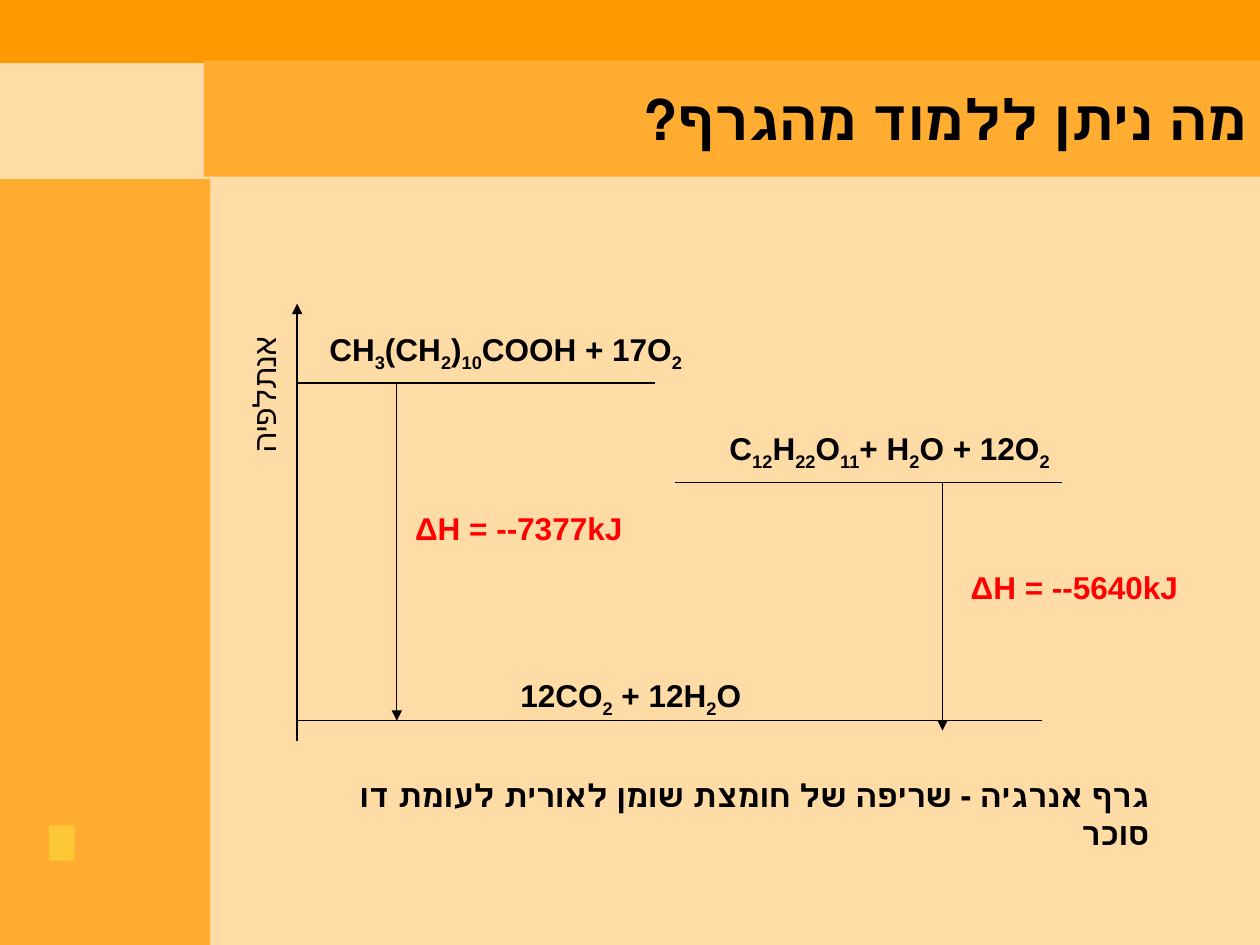
from lxml import etree
from pptx import Presentation
from pptx.dml.color import RGBColor
from pptx.enum.shapes import MSO_CONNECTOR, MSO_SHAPE
from pptx.enum.text import MSO_ANCHOR, MSO_AUTO_SIZE, PP_ALIGN
from pptx.oxml.ns import qn
from pptx.util import Cm, Pt

RECT, STRAIGHT = MSO_SHAPE.RECTANGLE, MSO_CONNECTOR.STRAIGHT
MIDDLE, RIGHT = MSO_ANCHOR.MIDDLE, PP_ALIGN.RIGHT
GROW = MSO_AUTO_SIZE.SHAPE_TO_FIT_TEXT

COLORS = {"page": "FFDBA6", "bar": "FF9900", "band": "FFAC31",
          "mark": "FCC836", "black": "000000", "red": "FF0000"}

# All lengths in cm
PANELS = [  # left, top, width, height, colour
    (0, 0, 25.4, 1.27, "bar"),
    (0, 3.61, 4.24, 15.44, "band"),
    (0.99, 16.64, 0.51, 0.71, "mark"),
]
TITLE = "מה ניתן ללמוד מהגרף?"
TITLE_BOX = (4.11, 1.22, 21.29, 2.34)

AXIS_X, AXIS_BOTTOM, AXIS_TOP = 5.99, 14.94, 6.12
FAT_Y, SUGAR_Y, PRODUCTS_Y = 7.72, 9.73, 14.53
LEVELS = [  # left, right, height of the energy level
    (AXIS_X, 13.21, FAT_Y),
    (13.61, 21.41, SUGAR_Y),
    (AXIS_X, 21.01, PRODUCTS_Y),
]
ARROWS = [  # x, from y, to y
    (AXIS_X, AXIS_BOTTOM, AXIS_TOP),
    (8, FAT_Y, PRODUCTS_Y),
    (19, SUGAR_Y, 14.73),
]
LABEL_HEIGHT = 1.02
LABELS = [  # text with _subscripts_, left, top, width, format
    ("אנתלפיה", 3.51, 7.82, 3.61, {"bold": False, "rotation": 270}),
    ("CH_3_(CH_2_)_10_COOH + 17O_2_", 6.2, 6.53, 7.8, {}),
    ("C_12_H_22_O_11_+ H_2_O + 12O_2_", 13.21, 8.53, 8.2, {}),
    ("ΔH = --5640kJ", 19.2, 11.33, 4.8, {"color": "red"}),
    ("ΔH = --7377kJ", 8.1, 10.13, 4.7, {"color": "red", "wrap": False}),
    ("12CO_2_ + 12H_2_O", 8.99, 13.51, 6.2, {}),
    ("גרף אנרגיה - שריפה של חומצת שומן לאורית לעומת דו סוכר",
     6.71, 15.52, 16.71, {}),
]


def rgb(name):
    return RGBColor.from_string(COLORS[name])


def paint(shape, color):
    shape.fill.solid()
    shape.fill.fore_color.rgb = rgb(color)
    shape.line.fill.background()


def write(p, text, size, color="black", bold=True):
    """Write right-to-left text, lowering the parts between underscores."""
    p.alignment = RIGHT
    p._p.get_or_add_pPr().set("rtl", "1")
    for i, part in enumerate(text.split("_")):
        if not part:
            continue
        r = p.add_run()
        r.text = part
        for name, value in {"name": "Arial", "size": Pt(size), "bold": bold}.items():
            setattr(r.font, name, value)
        r.font.color.rgb = rgb(color)
        if i % 2:
            r._r.get_or_add_rPr().set("baseline", "-25000")


def add_line(s, x1, y1, x2, y2, arrow=False):
    line = s.shapes.add_connector(STRAIGHT, Cm(x1), Cm(y1), Cm(x2), Cm(y2))
    line.line.width = Pt(0.75)
    line.line.color.rgb = rgb("black")
    if arrow:
        etree.SubElement(line.line._get_or_add_ln(), qn("a:tailEnd"), type="triangle")
    etree.SubElement(line._element.spPr, qn("a:effectLst"))


def add_label(s, text, left, top, width, rotation=0, wrap=True, **style):
    box = s.shapes.add_textbox(Cm(left), Cm(top), Cm(width), Cm(LABEL_HEIGHT))
    box.rotation = rotation
    tf = box.text_frame
    tf.word_wrap = wrap
    tf.auto_size = GROW
    write(tf.paragraphs[0], text, 18, **style)


def add_title(s):
    title = s.shapes.title
    title.left, title.top, title.width, title.height = map(Cm, TITLE_BOX)
    paint(title, "band")
    title.text_frame.vertical_anchor = MIDDLE
    write(title.text_frame.paragraphs[0], TITLE, 32)
    title.element.getparent().append(title.element)  # in front of the panels


def main():
    prs = Presentation()
    prs.slide_width, prs.slide_height = Cm(25.4), Cm(19.05)
    s = prs.slides.add_slide(prs.slide_layouts[5])
    s.background.fill.solid()
    s.background.fill.fore_color.rgb = rgb("page")

    for *box, color in PANELS:
        panel = s.shapes.add_shape(RECT, *map(Cm, box))
        panel.shadow.inherit = False
        paint(panel, color)
    add_title(s)

    for left, right, y in LEVELS:
        add_line(s, left, y, right, y)
    for x, start, end in ARROWS:
        add_line(s, x, start, x, end, arrow=True)
    for text, left, top, width, style in LABELS:
        add_label(s, text, left, top, width, **style)

    prs.save("out.pptx")


if __name__ == "__main__":
    main()
